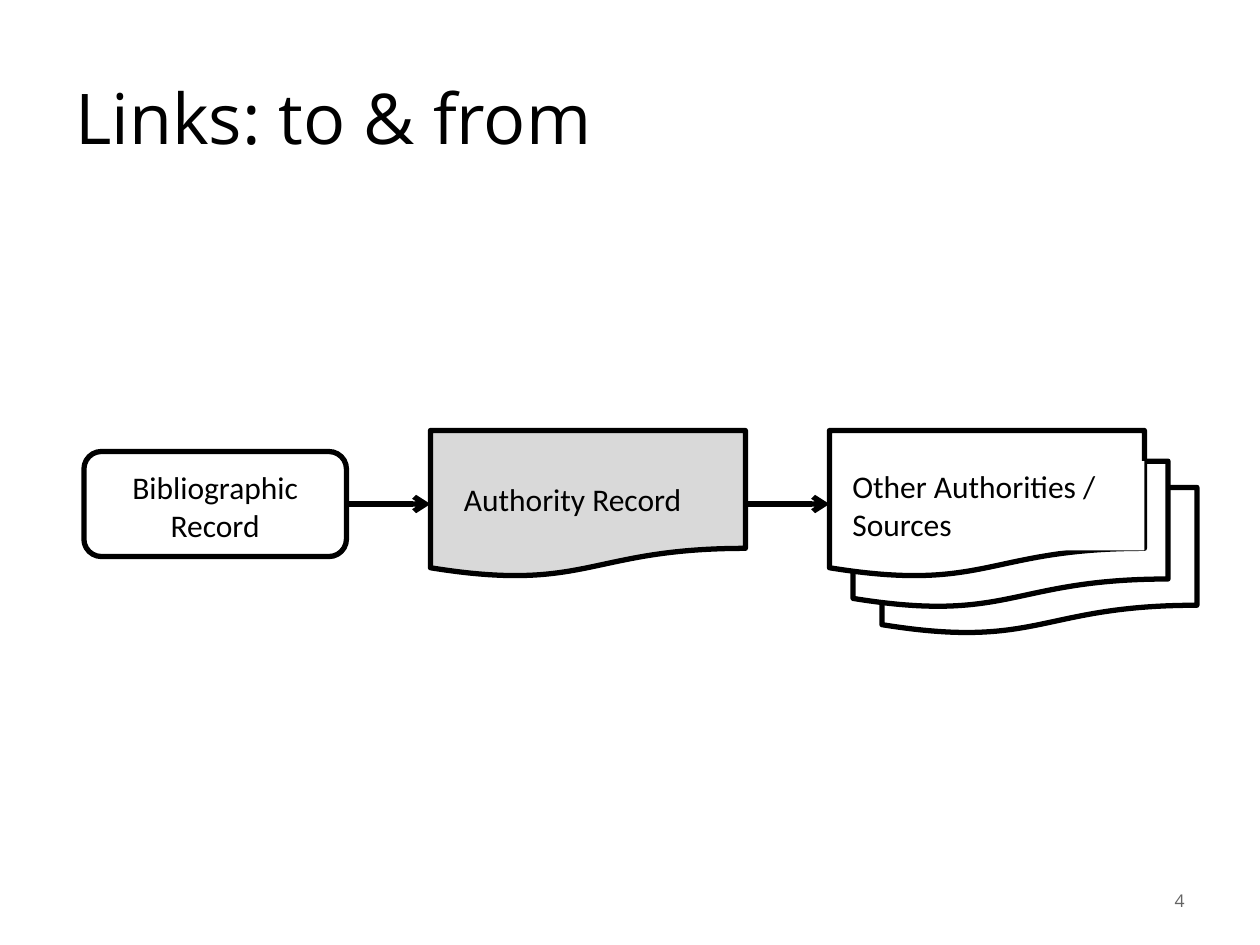
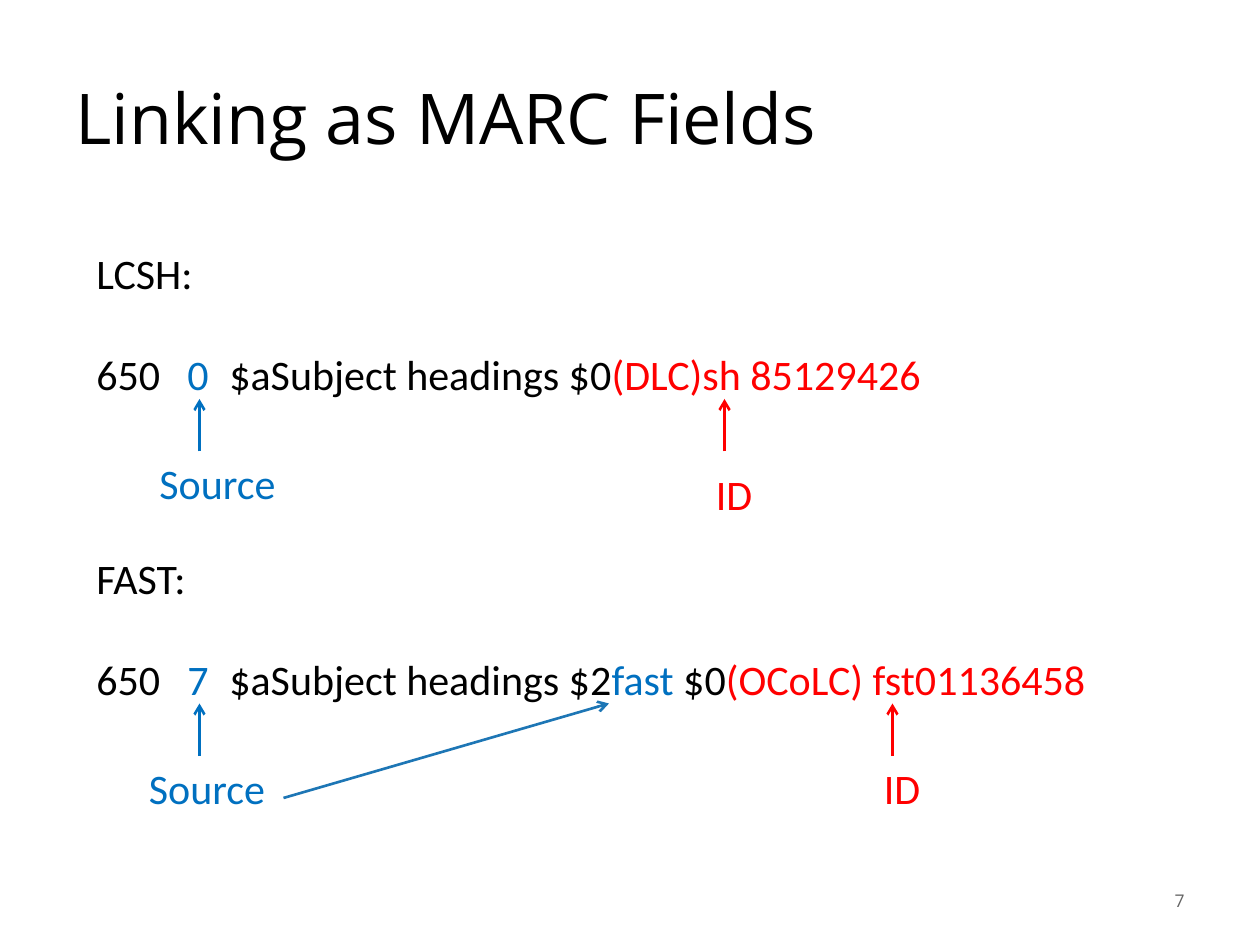
import lxml.etree
import pptx
import pptx.dml.color
import pptx.enum.shapes
import pptx.enum.text
import pptx.oxml.ns
import pptx.util

Pt = pptx.util.Pt
Shape = pptx.enum.shapes.MSO_SHAPE
Align = pptx.enum.text.PP_ALIGN
Anchor = pptx.enum.text.MSO_ANCHOR
qn = pptx.oxml.ns.qn

COLORS = {
    "ink": "000000",
    "paper": "FFFFFF",
    "shade": "D9D9D9",
    "number": "646464",
    "source": "0070C0",
    "id": "FF0000",
    "link": "1D76B5",
}
HEADING_FONT = "Open Sans"
BODY_FONT = "Calibri"

LINKS_TITLE, LINKS_NUMBER = "Links: to & from", "4"
MIDLINE = 288
DOCUMENT_SIZE = (180, 84)
BIBLIOGRAPHIC = "Bibliographic Record"
AUTHORITY = "Authority Record"
OTHERS = "Other Authorities / Sources"
SHEETS_BACK_TO_FRONT = [(504, 278.5), (487.5, 263.5), (474, 246)]

FIELDS_TITLE, FIELDS_NUMBER = "Linking as MARC Fields", "7"
FIELD_TABS = [52, 76]
RECORDS = [
    {
        "top": 138,
        "heading": "LCSH:",
        "field": [("650\t", "ink"), ("0", "source"),
                  ("\t$aSubject headings $0", "ink"), ("(DLC)sh 85129426", "id")],
        "labels": [("Source", "source", 84, 258, 114), ("ID", "id", 402, 264, 414)],
    },
    {
        "top": 312,
        "heading": "FAST:",
        "field": [("650\t", "ink"), ("7", "source"),
                  ("\t$aSubject headings $2", "ink"), ("fast", "source"),
                  (" $0", "ink"), ("(OCoLC) fst01136458", "id")],
        "labels": [("Source", "source", 78, 432, 114), ("ID", "id", 498, 432, 510)],
    },
]
SUBFIELD_LINK = (162, 456, 348, 402)


def rgb(name):
    return pptx.dml.color.RGBColor.from_string(COLORS[name])


def style(para, size, font=BODY_FONT, color=None, align=Align.LEFT):
    para.alignment = align
    para.font.size = Pt(size)
    para.font.name = font
    if color:
        para.font.color.rgb = rgb(color)


def add_text(page, text, left, top, width, height, size, color="ink",
             font=BODY_FONT, align=Align.LEFT, anchor=Anchor.TOP):
    box = page.shapes.add_textbox(Pt(left), Pt(top), Pt(width), Pt(height))
    box.text_frame.word_wrap = True
    box.text_frame.vertical_anchor = anchor
    para = box.text_frame.paragraphs[0]
    para.text = text
    style(para, size, font, color, align)
    return box


def add_outline(page, kind, left, top, width, height, fill="paper"):
    shape = page.shapes.add_shape(kind, Pt(left), Pt(top), Pt(width), Pt(height))
    shape.shadow.inherit = False
    shape.fill.solid()
    shape.fill.fore_color.rgb = rgb(fill)
    shape.line.color.rgb = rgb("ink")
    shape.line.width = Pt(3)
    return shape


def add_arrow(page, start_x, start_y, end_x, end_y, color, width):
    arrow = page.shapes.add_connector(
        pptx.enum.shapes.MSO_CONNECTOR.STRAIGHT,
        Pt(start_x), Pt(start_y), Pt(end_x), Pt(end_y))
    arrow.line.color.rgb = rgb(color)
    arrow.line.width = Pt(width)
    lxml.etree.SubElement(arrow.line._get_or_add_ln(), qn("a:tailEnd"), type="arrow")
    lxml.etree.SubElement(arrow._element.spPr, qn("a:effectLst"))
    return arrow


def join(page, source, target):
    arrow = add_arrow(page, 0, MIDLINE, 0, MIDLINE, "ink", 3)
    arrow.begin_connect(source, 3)
    arrow.end_connect(target, 1)


def add_page(deck, title, number):
    page = deck.slides.add_slide(deck.slide_layouts[6])
    add_text(page, title, 36, 21.6, 648, 90, 40, font=HEADING_FONT, anchor=Anchor.MIDDLE)
    add_text(page, number, 516, 500.5, 168, 28.75, 10, "number", HEADING_FONT,
             Align.RIGHT, Anchor.MIDDLE)
    return page


def add_record(page, record):
    box = add_text(page, record["heading"], 48, record["top"], 600, 94, 24)
    para = box.text_frame.add_paragraph()
    tabs = lxml.etree.SubElement(para._p.get_or_add_pPr(), qn("a:tabLst"))
    for stop in FIELD_TABS:
        lxml.etree.SubElement(tabs, qn("a:tab"), pos=str(Pt(stop)), algn="l")
    para.space_before = Pt(29)
    style(para, 24)
    for text, color in record["field"]:
        span = para.add_run()
        span.text = text
        span.font.color.rgb = rgb(color)
    for text, color, left, top, arrow_x in record["labels"]:
        add_text(page, text, left, top, 108, 36, 24, color)
        add_arrow(page, arrow_x, record["top"] + 120, arrow_x, record["top"] + 90, color, 1.5)


def build_links(deck):
    page = add_page(deck, LINKS_TITLE, LINKS_NUMBER)
    bibliographic = add_outline(page, Shape.ROUNDED_RECTANGLE, 48, MIDLINE - 30, 150, 60)
    add_text(page, BIBLIOGRAPHIC, 54, 264, 138, 51, 18, align=Align.CENTER)
    authority = add_outline(page, Shape.FLOWCHART_DOCUMENT, 246,
                            MIDLINE - DOCUMENT_SIZE[1] / 2, *DOCUMENT_SIZE, "shade")
    join(page, bibliographic, authority)
    add_text(page, AUTHORITY, 258, 271, 174, 29, 18)
    for left, top in SHEETS_BACK_TO_FRONT:
        sheet = add_outline(page, Shape.FLOWCHART_DOCUMENT, left, top, *DOCUMENT_SIZE)
    label = add_text(page, OTHERS, 480, 263.5, 174, 51, 18)
    label.fill.solid()
    label.fill.fore_color.rgb = rgb("paper")
    join(page, authority, sheet)


def build_fields(deck):
    page = add_page(deck, FIELDS_TITLE, FIELDS_NUMBER)
    for record in RECORDS:
        add_record(page, record)
    add_arrow(page, *SUBFIELD_LINK, "link", 1.5)


def main():
    deck = pptx.Presentation()
    deck.slide_width, deck.slide_height = Pt(720), Pt(540)
    build_links(deck)
    build_fields(deck)
    deck.save("out.pptx")


if __name__ == "__main__":
    main()
